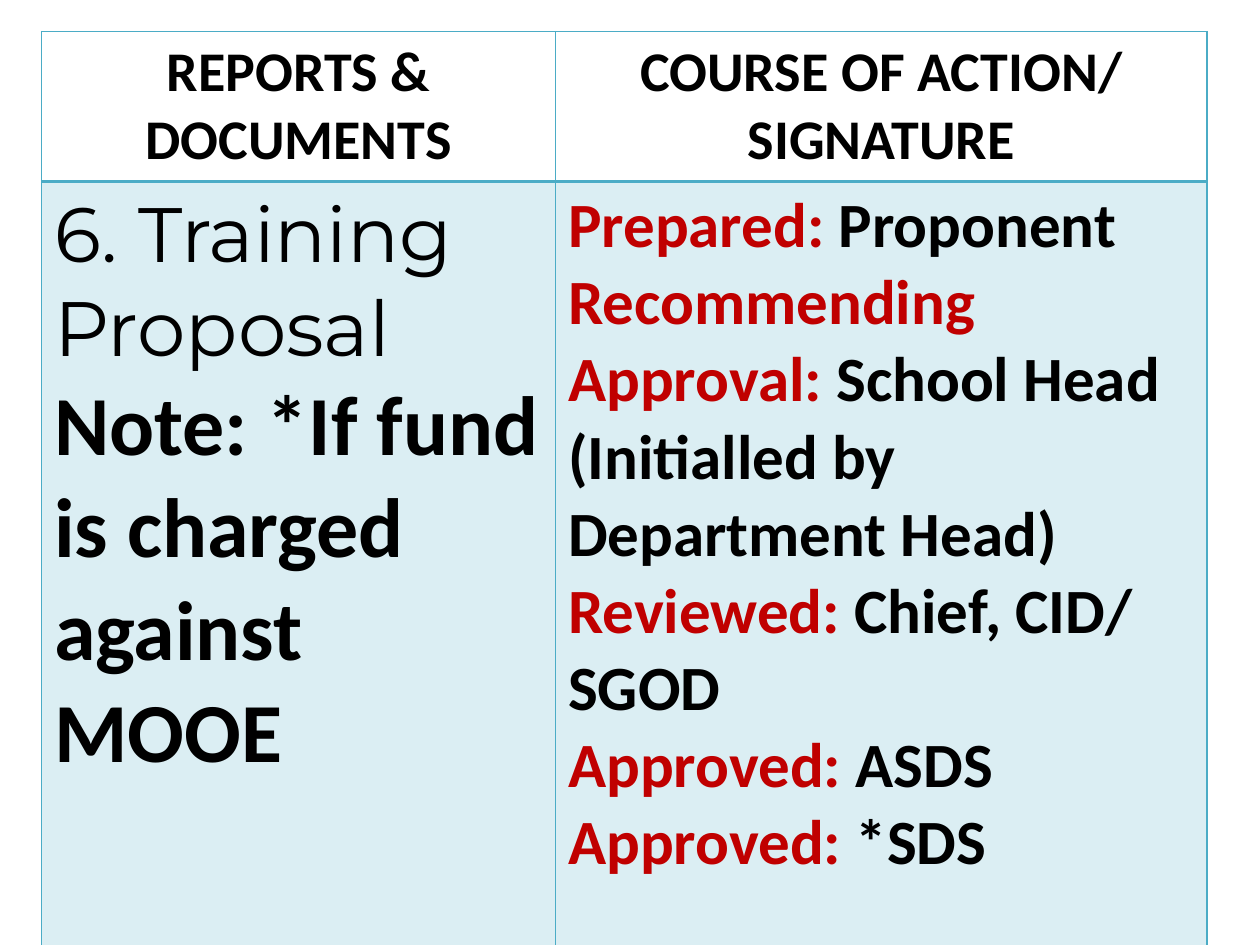
from lxml import etree
from pptx import Presentation
from pptx import util as u
from pptx.dml.color import RGBColor
from pptx.enum import text
from pptx.oxml import ns

# Theme: colours and type styles
THEME = {
    "line": "4BACC6", "fill": "4BACC6", "alpha": 20,
    "head": {"name": "Calibri", "size": 32, "bold": True, "color": "000000"},
    "title": {"name": "Montserrat", "size": 44, "bold": False, "color": "000000"},
    "note": {"name": "Calibri", "size": 48, "bold": True, "color": "000000"},
    "step": {"name": "Calibri", "size": 36, "bold": True, "color": "C00000"},
    "who": {"name": "Calibri", "size": 36, "bold": True, "color": "000000"},
}

# Content: each cell is a list of paragraphs, each a list of (style, words)
HEADS = ["REPORTS & DOCUMENTS", "COURSE OF ACTION/ SIGNATURE"]
REPORT = [("title", "6. Training Proposal"),
          ("note", "Note: *If fund is charged against MOOE")]
STEPS = [("Prepared: ", "Proponent"),
         ("Recommending Approval: ", "School Head (Initialled by Department Head)"),
         ("Reviewed: ", "Chief, CID/ SGOD"),
         ("Approved: ", "ASDS"),
         ("Approved: ", "*SDS")]
ROWS = [
    [[[("head", head)]] for head in HEADS],
    [[[part] for part in REPORT],
     [[("step", step), ("who", who)] for step, who in STEPS]],
]

# Layout
LEFT, TOP = 0.33, 0.25
COLS = [4.08, 5.17]
HIGH = [1.19, 6.15]


def write(cell, paras, align):
    frame = cell.text_frame
    for i, parts in enumerate(paras):
        para = frame.paragraphs[0] if i == 0 else frame.add_paragraph()
        para.alignment = align
        for style, words in parts:
            run = para.add_run()
            run.text = words
            look = dict(THEME[style])
            run.font.color.rgb = RGBColor.from_string(look.pop("color"))
            look["size"] = u.Pt(look["size"])
            for key, value in look.items():
                setattr(run.font, key, value)


def border(cell, widths):
    props = cell._tc.get_or_add_tcPr()
    for i, (side, width) in enumerate(widths.items()):
        line = etree.Element(ns.qn("a:ln" + side), w=str(u.Pt(width)))
        solid = etree.SubElement(line, ns.qn("a:solidFill"))
        etree.SubElement(solid, ns.qn("a:srgbClr"), val=THEME["line"])
        props.insert(i, line)


def tint(cell):
    cell.fill.solid()
    cell.fill.fore_color.rgb = RGBColor.from_string(THEME["fill"])
    color = cell._tc.tcPr.find(".//" + ns.qn("a:srgbClr"))
    etree.SubElement(color, ns.qn("a:alpha"), val=str(THEME["alpha"] * 1000))


def main():
    deck = Presentation()
    deck.slide_width, deck.slide_height = u.Inches(10), u.Inches(7.5)
    slide = deck.slides.add_slide(deck.slide_layouts[6])

    # Table grid
    box = [u.Inches(v) for v in (LEFT, TOP, sum(COLS), sum(HIGH))]
    table = slide.shapes.add_table(len(ROWS), len(COLS), *box).table
    table.first_row = table.horz_banding = False
    for col, width in zip(table.columns, COLS):
        col.width = u.Inches(width)
    for row, height in zip(table.rows, HIGH):
        row.height = u.Inches(height)

    # Cells: plain header above a tinted body, with a thicker rule between
    for r, row in enumerate(ROWS):
        is_head = r == 0
        align = text.PP_ALIGN.CENTER if is_head else text.PP_ALIGN.LEFT
        for c, paras in enumerate(row):
            cell = table.cell(r, c)
            write(cell, paras, align)
            if is_head:
                cell.fill.background()
            else:
                tint(cell)
            border(cell, {"L": 1, "R": 1, "T": 1 if is_head else 2,
                          "B": 2 if is_head else 1})

    deck.save("out.pptx")


if __name__ == "__main__":
    main()
